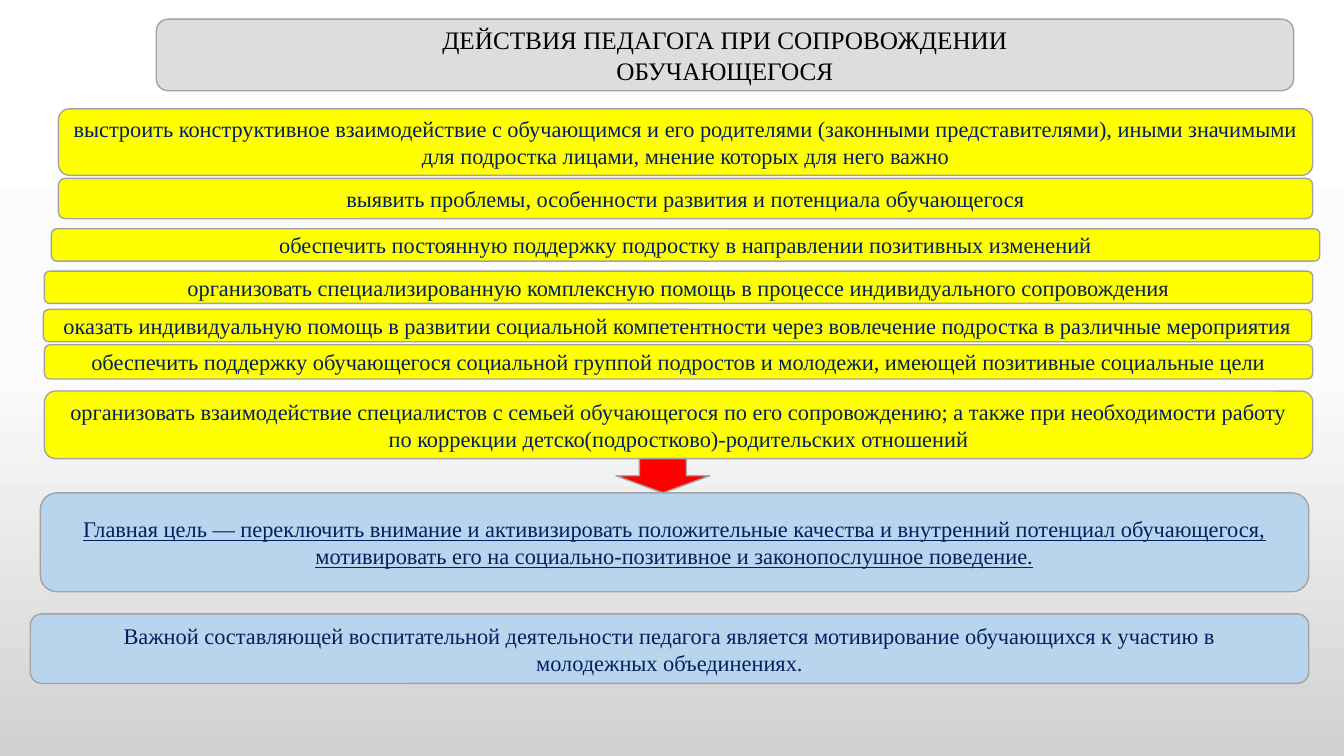
from dataclasses import dataclass

from lxml import etree
from pptx import Presentation
from pptx.dml.color import RGBColor
from pptx.enum.shapes import MSO_SHAPE
from pptx.enum.text import MSO_ANCHOR, MSO_AUTO_SIZE, PP_ALIGN
from pptx.oxml.ns import qn
from pptx.shapes.autoshape import Shape
from pptx.slide import Slide
from pptx.text.text import TextFrame
from pptx.util import Emu, Pt

PX = 9144
ROUNDED = MSO_SHAPE.ROUNDED_RECTANGLE
DOWN_ARROW = MSO_SHAPE.DOWN_ARROW
CENTER = PP_ALIGN.CENTER
MIDDLE = MSO_ANCHOR.MIDDLE
NO_FIT = MSO_AUTO_SIZE.NONE
TITLE_ONLY = 5


@dataclass(frozen=True)
class Theme:
    font: str = "Times New Roman"
    title_size: int = 18
    body_size: int = 16
    title_text: str = "000000"
    body_text: str = "002060"
    title_fill: str = "DDDDDD"
    action_fill: str = "FFFF00"
    goal_fill: str = "B9D4ED"
    arrow_fill: str = "FF0000"
    outline: str = "A3A3A3"
    outline_width: int = 1
    backdrop: tuple[tuple[int, str], ...] = ((0, "FFFFFF"), (50, "FBFBFB"), (100, "D1D1D1"))


@dataclass(frozen=True)
class Area:
    left: int
    top: int
    width: int
    height: int

    def emu(self) -> tuple[Emu, Emu, Emu, Emu]:
        return (Emu(self.left * PX), Emu(self.top * PX),
                Emu(self.width * PX), Emu(self.height * PX))


@dataclass(frozen=True)
class Card:
    area: Area
    text: str
    fill: str
    underline: bool = False


THEME = Theme()
TITLE = "ДЕЙСТВИЯ ПЕДАГОГА ПРИ СОПРОВОЖДЕНИИ\nОБУЧАЮЩЕГОСЯ"
TITLE_AREA = Area(155, 19, 1128, 71)
ARROW_AREA = Area(611, 455, 93, 34)

CARDS = (
    Card(Area(58, 108, 1244, 66),
         "выстроить конструктивное взаимодействие с обучающимся и его родителями "
         "(законными представителями), иными значимыми для подростка лицами, "
         "мнение которых для него важно", THEME.action_fill),
    Card(Area(58, 177, 1244, 40),
         "выявить проблемы, особенности развития и потенциала обучающегося",
         THEME.action_fill),
    Card(Area(51, 227, 1258, 32),
         "обеспечить постоянную поддержку подростку в направлении позитивных изменений",
         THEME.action_fill),
    Card(Area(44, 269, 1258, 32),
         "организовать специализированную комплексную помощь в процессе "
         "индивидуального сопровождения", THEME.action_fill),
    Card(Area(43, 307, 1258, 32),
         "оказать индивидуальную помощь в развитии социальной компетентности "
         "через вовлечение подростка в различные мероприятия", THEME.action_fill),
    Card(Area(44, 342, 1258, 34),
         "обеспечить поддержку обучающегося социальной группой подростов и молодежи, "
         "имеющей позитивные социальные цели", THEME.action_fill),
    Card(Area(44, 388, 1258, 67),
         "организовать взаимодействие специалистов с семьей обучающегося по его "
         "сопровождению; а также при необходимости работу по коррекции "
         "детско(подростково)-родительских отношений", THEME.action_fill),
    Card(Area(40, 489, 1258, 98),
         "Главная цель — переключить внимание и активизировать положительные качества "
         "и внутренний потенциал обучающегося,\n"
         "мотивировать его на социально-позитивное и законопослушное поведение.",
         THEME.goal_fill, underline=True),
    Card(Area(30, 609, 1268, 69),
         "Важной составляющей воспитательной деятельности педагога является "
         "мотивирование обучающихся к участию в\nмолодежных объединениях.",
         THEME.goal_fill),
)


def write_text(frame: TextFrame, text: str, *, size: int = THEME.body_size,
               color: str = THEME.body_text, underline: bool = False) -> None:
    frame.text = text
    frame.word_wrap = True
    frame.auto_size = NO_FIT
    frame.vertical_anchor = MIDDLE
    for para in frame.paragraphs:
        para.alignment = CENTER
        for span in para.runs:
            span.font.name = THEME.font
            span.font.size = Pt(size)
            span.font.color.rgb = RGBColor.from_string(color)
            span.font.underline = underline


def draw_shape(page: Slide, kind: MSO_SHAPE, area: Area, fill: str) -> Shape:
    box = page.shapes.add_shape(kind, *area.emu())
    box.shadow.inherit = False
    box.fill.solid()
    box.fill.fore_color.rgb = RGBColor.from_string(fill)
    box.line.color.rgb = RGBColor.from_string(THEME.outline)
    box.line.width = Pt(THEME.outline_width)
    return box


def draw_card(page: Slide, card: Card) -> None:
    box = draw_shape(page, ROUNDED, card.area, card.fill)
    write_text(box.text_frame, card.text, underline=card.underline)


def draw_title(page: Slide) -> None:
    panel = draw_shape(page, ROUNDED, TITLE_AREA, THEME.title_fill)
    title = page.shapes.title
    title.left, title.top, title.width, title.height = TITLE_AREA.emu()
    write_text(title.text_frame, TITLE, size=THEME.title_size, color=THEME.title_text)
    title.element.addprevious(panel.element)


def paint_background(page: Slide) -> None:
    fill = page.background.fill
    fill.gradient()
    fill.gradient_angle = 270
    stops = page.element.find(".//" + qn("a:gsLst"))
    for stop in list(stops):
        stops.remove(stop)
    for percent, color in THEME.backdrop:
        stop = etree.SubElement(stops, qn("a:gs"), pos=str(percent * 1000))
        etree.SubElement(stop, qn("a:srgbClr"), val=color)


def main() -> None:
    deck = Presentation()
    deck.slide_width, deck.slide_height = Emu(1333 * PX), Emu(750 * PX)
    page = deck.slides.add_slide(deck.slide_layouts[TITLE_ONLY])
    paint_background(page)
    draw_title(page)
    for card in CARDS:
        draw_card(page, card)
    draw_shape(page, DOWN_ARROW, ARROW_AREA, THEME.arrow_fill)
    deck.save("out.pptx")


if __name__ == "__main__":
    main()
